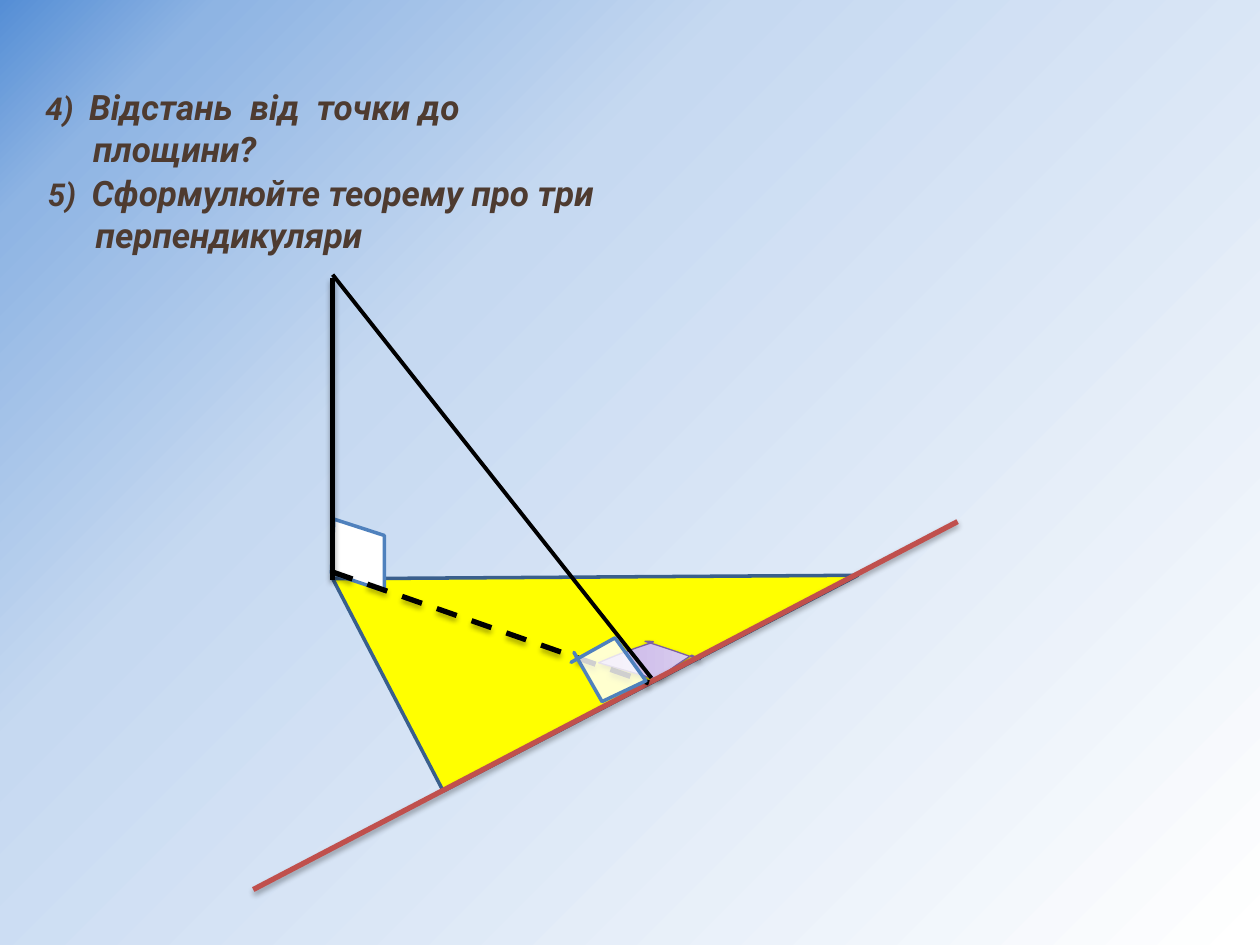
import pptx
import pptx.dml.color
import pptx.enum.dml
import pptx.enum.shapes
import pptx.enum.text
import pptx.oxml
import pptx.oxml.ns
import pptx.util

RGBColor = pptx.dml.color.RGBColor
BROWN = RGBColor(0x4E, 0x3B, 0x30)
YELLOW = RGBColor(0xFF, 0xFF, 0x00)
NAVY = RGBColor(0x3A, 0x5F, 0x8C)
BLUE = RGBColor(0x4F, 0x81, 0xBD)
RED = RGBColor(0xC0, 0x50, 0x4D)
PURPLE = RGBColor(0x7D, 0x60, 0xA0)
BLACK = RGBColor(0, 0, 0)
WHITE = RGBColor(0xFF, 0xFF, 0xFF)
SKY = [(0, RGBColor(0x55, 0x8E, 0xD5)), (10, RGBColor(0x8E, 0xB4, 0xE3)),
       (34, RGBColor(0xC6, 0xD9, 0xF1)), (100, WHITE)]
LILAC = [(0, RGBColor(0xC9, 0xB5, 0xE8)), (88, RGBColor(0xD8, 0xCB, 0xEE)),
         (100, RGBColor(0xF0, 0xEA, 0xF9))]
CORNER = '<a:path path="circle"><a:fillToRect r="100000" b="100000"/></a:path>'
ACROSS = '<a:lin ang="0" scaled="1"/>'
COLUMNS, ROWS = 10, 7.5


def xml(tag, attributes="", inner=""):
    space = pptx.oxml.ns.nsdecls("a")
    return pptx.oxml.parse_xml(f"<a:{tag} {space} {attributes}>{inner}</a:{tag}>")


def curve(start, first, second, end, steps=12):
    """Points along a cubic curve, without its start."""
    points = []
    for step in range(1, steps + 1):
        t = step / steps
        weights = ((1 - t) ** 3, 3 * t * (1 - t) ** 2, 3 * t * t * (1 - t), t ** 3)
        corners = (start, first, second, end)
        points.append(tuple(sum(w * c[axis] for w, c in zip(weights, corners))
                            for axis in (0, 1)))
    return points


class Drawing:
    font = "Roboto"

    def __init__(self, deck):
        self.deck = deck
        self.page = deck.slides.add_slide(deck.slide_layouts[3])
        title = self.page.shapes.title
        title._element.getparent().remove(title._element)

    def grid(self, column, row):
        return (round(self.deck.slide_width * column / COLUMNS),
                round(self.deck.slide_height * row / ROWS))

    def gradient(self, owner, element, stops, direction):
        owner.fill.solid()
        solid = element.xpath(".//a:solidFill")[0]
        inner = "".join(f'<a:gs pos="{place * 1000}"><a:srgbClr val="{color}"/></a:gs>'
                        for place, color in stops)
        fill = xml("gradFill", 'rotWithShape="1"', f"<a:gsLst>{inner}</a:gsLst>{direction}")
        solid.getparent().replace(solid, fill)

    def background(self, stops):
        back = self.page.background
        self.gradient(back, self.page._element.cSld, stops, CORNER)

    def shadow(self, shape, opacity, distance):
        """Leave the effect list empty, or put one soft shadow in it."""
        inner = ""
        if opacity:
            inner = (f'<a:outerShdw blurRad="{pptx.util.Pt(3.1)}" '
                     f'dist="{pptx.util.Pt(distance)}" dir="5400000" rotWithShape="0">'
                     f'<a:srgbClr val="000000"><a:alpha val="{opacity * 1000}"/>'
                     '</a:srgbClr></a:outerShdw>')
        shape._element.spPr.append(xml("effectLst", "", inner))

    def outline(self, shape, color, weight):
        shape.line.color.rgb = color
        shape.line.width = pptx.util.Pt(weight)

    def paint(self, shape, fill, line, weight, opacity=None, turn=0, shade=0):
        if isinstance(fill, list):
            self.gradient(shape, shape._element.spPr, fill, ACROSS)
        else:
            shape.fill.solid()
            shape.fill.fore_color.rgb = fill
        if opacity:
            color = shape._element.spPr.xpath("./a:solidFill/a:srgbClr")[0]
            color.append(xml("alpha", f'val="{opacity * 1000}"'))
        shape.rotation = turn
        self.outline(shape, line, weight)
        self.shadow(shape, shade, 1.6)

    def triangle(self, left, top, width, height, **look):
        kind = pptx.enum.shapes.MSO_SHAPE.RIGHT_TRIANGLE
        box = (*self.grid(left, top), *self.grid(width, height))
        self.paint(self.page.shapes.add_shape(kind, *box), **look)

    def polygon(self, points, **look):
        first, *rest = [self.grid(*point) for point in points]
        builder = self.page.shapes.build_freeform(*first)
        builder.add_line_segments(rest, close=True)
        self.paint(builder.convert_to_shape(), **look)

    def line(self, start, end, color, weight, dash=None, shade=0):
        kind = pptx.enum.shapes.MSO_CONNECTOR.STRAIGHT
        line = self.page.shapes.add_connector(kind, *self.grid(*start), *self.grid(*end))
        self.outline(line, color, weight)
        line.line.dash_style = dash
        self.shadow(line, shade, 1.8)

    def question(self, holder, number, text, left, top, width, height):
        box = self.page.placeholders[holder]
        box.left, box.top = self.grid(left, top)
        box.width, box.height = self.grid(width, height)
        frame = box.text_frame
        for name, value in {"word_wrap": True,
                            "auto_size": pptx.enum.text.MSO_AUTO_SIZE.NONE,
                            "vertical_anchor": pptx.enum.text.MSO_ANCHOR.TOP}.items():
            setattr(frame, name, value)
        para = frame.paragraphs[0]
        hang = pptx.util.Inches(0.38)
        indents = para._p.get_or_add_pPr()
        for name, value in {"marL": hang, "indent": -hang}.items():
            indents.set(name, str(value))
        indents.append(xml("buNone"))
        for words, size in ((number, 18), (text, 20)):
            span = para.add_run()
            span.text = words
            for name, value in {"name": self.font, "size": pptx.util.Pt(size),
                                "bold": True, "italic": True}.items():
                setattr(span.font, name, value)
            span.font.color.rgb = BROWN


def main():
    deck = pptx.Presentation()
    deck.slide_width = pptx.util.Inches(10)
    deck.slide_height = pptx.util.Inches(7.5)
    drawing = Drawing(deck)
    drawing.background(SKY)

    # Questions
    drawing.question(1, "4)  ", "Відстань  від  точки до площини?", 0.26, 0.63, 4.61, 0.44)
    drawing.question(2, "5)  ", "Сформулюйте теорему про три перпендикуляри",
                     0.28, 1.31, 6.34, 0.44)

    # Plane and the angle lying in it
    drawing.triangle(2.87, 3.63, 3.71, 1.9, fill=YELLOW, line=NAVY, weight=2, turn=332.5)
    left, top, right, foot = (4.75, 5.26), (5.12, 5.09), (5.49, 5.2), (5.17, 5.38)
    angle = [left,
             *curve(left, (5.14, 5.09), (5.28, 5.09), top),
             *curve(top, (5.53, 5.22), (5.65, 5.28), right),
             *curve(right, (5.18, 5.39), (5.3, 5.38), foot)]
    drawing.polygon(angle, fill=LILAC, line=PURPLE, weight=0.75, shade=38)

    # Oblique line and the line in the plane
    drawing.line((2.64, 2.18), (5.17, 5.38), BLACK, 2.25)
    drawing.line((2.01, 7.06), (7.6, 4.14), RED, 3, shade=35)

    # Perpendicular with its right angle, and the projection
    drawing.polygon([(2.63, 4.55), (3.05, 4.69), (3.05, 4.25), (2.65, 4.12)],
                    fill=WHITE, line=BLUE, weight=2)
    drawing.line((2.64, 2.21), (2.64, 4.6), BLACK, 3, shade=35)
    drawing.line((2.64, 4.54), (5.15, 5.42), BLACK, 3,
                 dash=pptx.enum.dml.MSO_LINE.DASH, shade=35)

    # Right angle of the oblique line
    drawing.polygon([(4.55, 5.19), (4.79, 5.57), (5.13, 5.39), (4.87, 5.06),
                     (4.53, 5.27), (4.58, 5.24)],
                    fill=WHITE, line=BLUE, weight=2, opacity=81, turn=2.6)
    deck.save("out.pptx")


if __name__ == "__main__":
    main()
